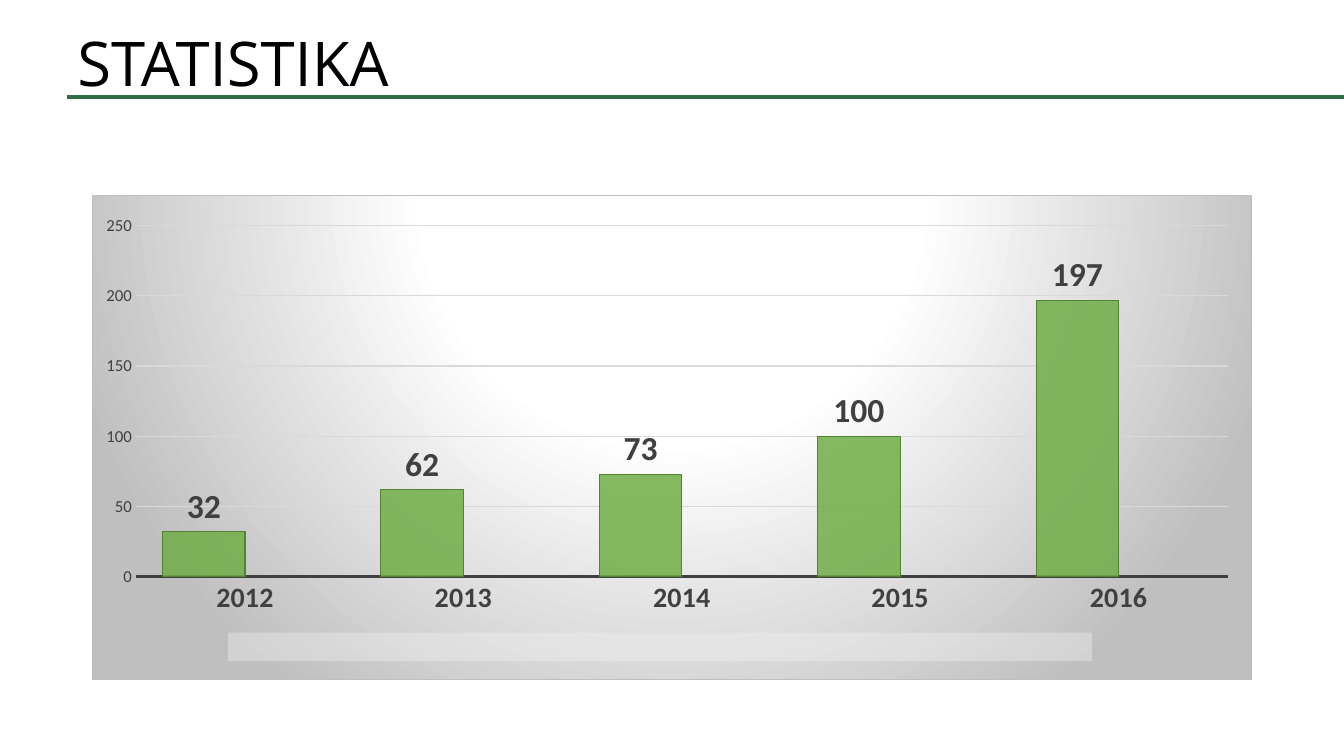
"""Build the STATISTIKA slide with a column chart for 2012 to 2016."""
from lxml.etree import SubElement
from pptx import Presentation
from pptx.chart.data import CategoryChartData
from pptx.dml.color import RGBColor
from pptx.enum.chart import XL_CHART_TYPE, XL_LABEL_POSITION, XL_TICK_MARK
from pptx.enum.shapes import MSO_CONNECTOR, MSO_SHAPE
from pptx.enum.text import MSO_ANCHOR
from pptx.oxml import parse_xml
from pptx.oxml.ns import nsdecls, qn
from pptx.util import Cm, Pt

BLACK = RGBColor(0x00, 0x00, 0x00)
DARK_GREY = RGBColor(0x40, 0x40, 0x40)
GRID_GREY = RGBColor(0xD9, 0xD9, 0xD9)
STRIP_GREY = RGBColor(0xF2, 0xF2, 0xF2)
RULE_GREEN = RGBColor(0x2F, 0x6D, 0x44)
BAR_GREEN = RGBColor(0x70, 0xAD, 0x47)
BAR_EDGE = RGBColor(0x54, 0x82, 0x35)


def set_font(font, size, color, bold=False, name="Calibri"):
    font.name, font.size, font.bold = name, Pt(size), bold
    font.color.rgb = color


def fill_translucent(fill, properties, color, alpha):
    fill.solid()
    fill.fore_color.rgb = color
    color_element = properties.find(f'{qn("a:solidFill")}/{qn("a:srgbClr")}')
    SubElement(color_element, qn("a:alpha"), val=str(alpha * 1000))


deck = Presentation()
deck.slide_width, deck.slide_height = Cm(33.87), Cm(19.05)
page = deck.slides.add_slide(deck.slide_layouts[6])

rule = page.shapes.add_connector(MSO_CONNECTOR.STRAIGHT, Cm(1.7), Cm(2.44), Cm(33.87), Cm(2.44))
rule.line.color.rgb = RULE_GREEN
rule.line.width = Pt(3)
SubElement(rule.element.spPr, qn("a:effectLst"))

title = page.shapes.add_textbox(Cm(1.7), Cm(0.03), Cm(29.21), Cm(3.28))
title.text_frame.word_wrap = True
title.text_frame.vertical_anchor = MSO_ANCHOR.MIDDLE
heading = title.text_frame.paragraphs[0]
heading.text = "STATISTIKA"
heading.line_spacing = 0.9
set_font(heading.font, 44, BLACK, name="Open Sans")

data = CategoryChartData()
data.categories = ["2012", "2013", "2014", "2015", "2016"]
data.add_series("", (32, 62, 73, 100, 197))
data.add_series("", (None,) * 5)
chart = page.shapes.add_chart(
    XL_CHART_TYPE.COLUMN_CLUSTERED, Cm(2.33), Cm(4.92), Cm(29.21), Cm(12.22), data).chart
chart.has_title = False
chart.has_legend = False
set_font(chart.font, 10, BLACK)

plot = chart.plots[0]
plot.gap_width, plot.overlap, plot.vary_by_categories = 65, 0, False
bars = plot.series[0]
bars.format.line.color.rgb = BAR_EDGE
bars.format.line.width = Pt(0.75)
fill_translucent(bars.format.fill, bars._element.find(qn("c:spPr")), BAR_GREEN, 85)
bars.data_labels.show_value = True
bars.data_labels.position = XL_LABEL_POSITION.OUTSIDE_END
set_font(bars.data_labels.font, 24, DARK_GREY, True)

years, counts = chart.category_axis, chart.value_axis
for axis, size, bold in ((years, 20, True), (counts, 12, False)):
    axis.major_tick_mark = axis.minor_tick_mark = XL_TICK_MARK.NONE
    set_font(axis.tick_labels.font, size, DARK_GREY, bold)
years.format.line.color.rgb = DARK_GREY
years.format.line.width = Pt(1.5)
counts.minimum_scale, counts.maximum_scale, counts.major_unit = 0, 250, 50
counts.format.line.fill.background()
counts.major_gridlines.format.line.color.rgb = GRID_GREY
counts.major_gridlines.format.line.width = Pt(0.75)

space = chart.element
plot_area = space.find(f'.//{qn("c:plotArea")}')
for layout in plot_area.findall(qn("c:layout")):
    plot_area.remove(layout)
plot_area.insert(0, parse_xml(
    f'<c:layout {nsdecls("c")}><c:manualLayout><c:layoutTarget val="inner"/>'
    '<c:xMode val="edge"/><c:yMode val="edge"/>'
    '<c:x val="0.037"/><c:y val="0.062"/><c:w val="0.943"/><c:h val="0.725"/>'
    '</c:manualLayout></c:layout>'))

space.find(qn("c:txPr")).addprevious(parse_xml(
    f'<c:spPr {nsdecls("c", "a")}><a:gradFill><a:gsLst>'
    '<a:gs pos="0"><a:srgbClr val="FFFFFF"/></a:gs>'
    '<a:gs pos="39000"><a:srgbClr val="FFFFFF"/></a:gs>'
    '<a:gs pos="100000"><a:srgbClr val="BFBFBF"/></a:gs></a:gsLst>'
    '<a:path path="circle"><a:fillToRect l="50000" t="-80000" r="50000" b="180000"/></a:path>'
    '</a:gradFill><a:ln w="9525"><a:solidFill><a:srgbClr val="BFBFBF"/></a:solidFill></a:ln></c:spPr>'))

strip = page.shapes.add_shape(MSO_SHAPE.RECTANGLE, Cm(5.75), Cm(15.94), Cm(21.77), Cm(0.72))
strip.shadow.inherit = False
strip.line.fill.background()
fill_translucent(strip.fill, strip.element.spPr, STRIP_GREY, 39)

deck.save("out.pptx")
